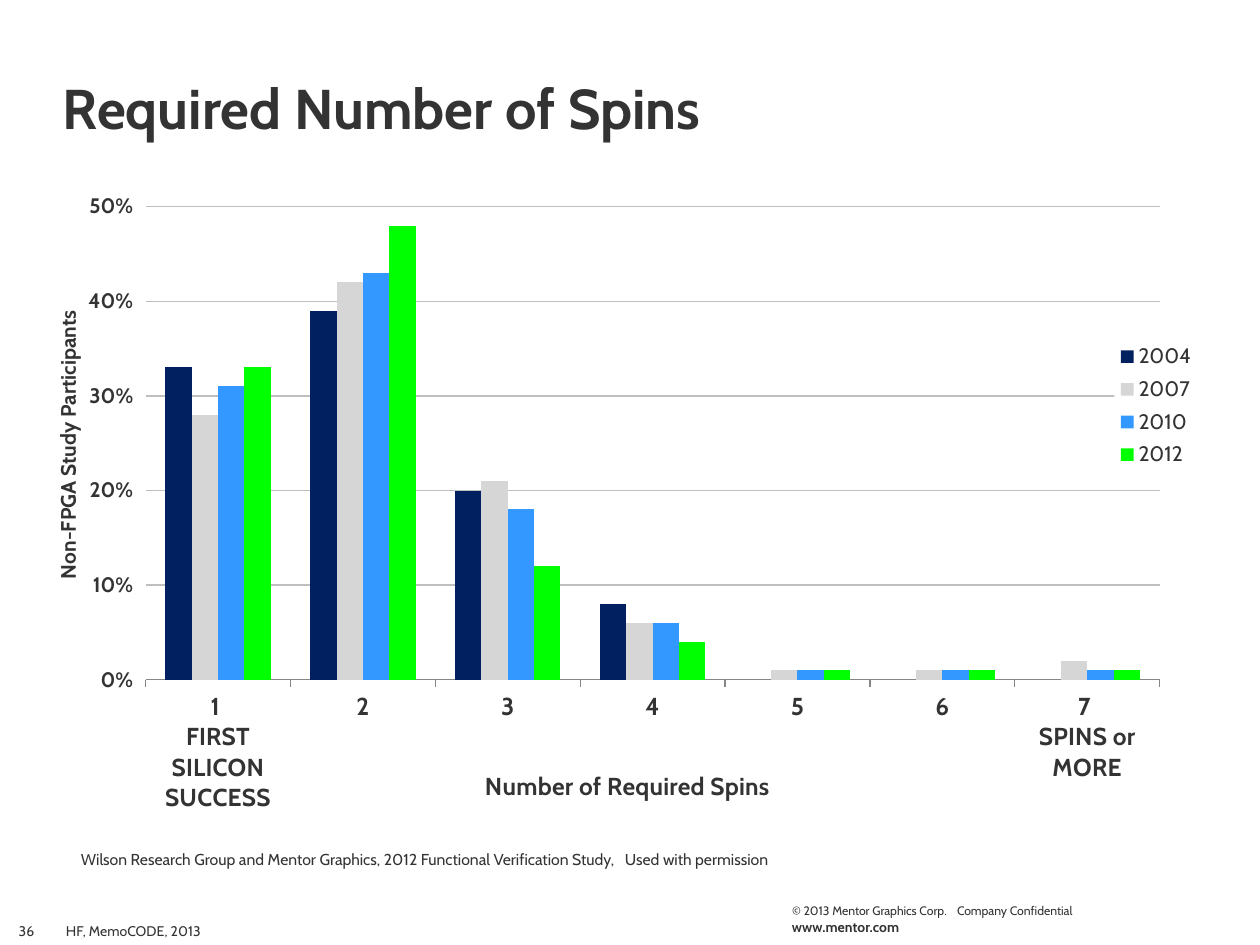
"""Build the slide on the required number of spins."""
import pptx
import pptx.chart.data
import pptx.dml.color
import pptx.enum.chart
import pptx.enum.text
import pptx.oxml
import pptx.oxml.ns
import pptx.util

INK, FACE, GRID, AXIS = "333333", "Cabin", "BFBFBF", "868686"
ENUM = pptx.enum.chart
ALIGN = pptx.enum.text.PP_ALIGN
ANCHOR = pptx.enum.text.MSO_ANCHOR
TOP, LOW = ANCHOR.TOP, ANCHOR.BOTTOM

# text, box, size, bold, side inset, anchor, alignment, tab stop
TEXTS = [
    ("www.mentor.com", (779, 912, 199, 29), 8, True, 13, TOP, ALIGN.LEFT, None),
    ("© 2013 Mentor Graphics Corp.\tCompany Confidential",
     (779, 897, 334, 28), 7, False, 13, TOP, ALIGN.LEFT, 165),
    ("Required Number of Spins", (0, 0, 1260, 147), 32, True, 63, LOW, ALIGN.LEFT, None),
    ("HF, MemoCODE, 2013", (53, 914, 718, 31), 8, False, 13, LOW, ALIGN.LEFT, None),
    ("Wilson Research Group and Mentor Graphics, 2012 Functional Verification Study,"
     "\tUsed with permission", (68, 844, 716, 32), 9, False, 13, TOP, ALIGN.LEFT, 544),
    ("36", (0, 914, 53, 31), 8, False, 13, LOW, ALIGN.CENTER, None),
]
CHART = (32, 185, 1196, 659)
CATS = ["1 \nFIRST SILICON SUCCESS", "2", "3", "4", "5", "6", "7 \nSPINS or MORE"]
SERIES = [
    ("2004", "002060", (0.33, 0.39, 0.2, 0.08, None, None, None)),
    ("2007", "D6D6D6", (0.28, 0.42, 0.21, 0.06, 0.01, 0.01, 0.02)),
    ("2010", "3398FF", (0.31, 0.43, 0.18, 0.06, 0.01, 0.01, 0.01)),
    ("2012", "00FF00", (0.33, 0.48, 0.12, 0.04, 0.01, 0.01, 0.01)),
]
PLOT = (0.095, 0.033, 0.848, 0.718)
KEY = (0.905, 0.23, 0.07, 0.21)


def px(num):
    return round(num * 914400 / 126)


def paint(color, tone):
    color.rgb = pptx.dml.color.RGBColor.from_string(tone)


def style(font, size, bold):
    font.name, font.size, font.bold = FACE, pptx.util.Pt(size), bold
    paint(font.color, INK)


def xml(body):
    head, tail = body.split(">", 1)
    return pptx.oxml.parse_xml(f"{head} {pptx.oxml.ns.nsdecls('c', 'a')}>{tail}")


def place(node, spot, inner=False):
    for old in node.xpath("c:layout"):
        node.remove(old)
    body = '<c:layoutTarget val="inner"/>' if inner else ""
    body += '<c:xMode val="edge"/><c:yMode val="edge"/>'
    body += "".join(f'<c:{key} val="{val}"/>' for key, val in zip("xywh", spot))
    part = xml(f"<c:layout><c:manualLayout>{body}</c:manualLayout></c:layout>")
    over = node.xpath("c:overlay")
    if over:
        over[0].addprevious(part)
    else:
        node.insert(0, part)


def write(slide, text, box, size, bold, inset, anchor, align, stop):
    frame = slide.shapes.add_textbox(*map(px, box)).text_frame
    frame.word_wrap, frame.vertical_anchor = True, anchor
    frame.margin_left = frame.margin_right = px(inset)
    frame.text = text
    para = frame.paragraphs[0]
    para.alignment = align
    if stop:
        tabs = xml(f'<a:tabLst><a:tab pos="{px(stop)}" algn="l"/></a:tabLst>')
        para._p.get_or_add_pPr().append(tabs)
    for run in para.runs:
        style(run.font, size, bold)


def label(axis, text, size, spot, turn):
    title = axis.axis_title
    title.text_frame.text = text
    style(title.text_frame.paragraphs[0].runs[0].font, size, True)
    title.text_frame._txBody.bodyPr.set("rot", str(turn))
    place(title._element, spot)
    style(axis.tick_labels.font, size, True)


def draw(slide):
    data = pptx.chart.data.CategoryChartData(number_format="0%")
    data.categories = CATS
    for name, tone, vals in SERIES:
        data.add_series(name, vals)
    kind = ENUM.XL_CHART_TYPE.COLUMN_CLUSTERED
    chart = slide.shapes.add_chart(kind, *map(px, CHART), data).chart
    style(chart.font, 10, False)
    chart.has_title = False
    plot = chart.plots[0]
    plot.gap_width, plot.overlap, plot.vary_by_categories = 150, 0, False
    for item, (name, tone, vals) in zip(plot.series, SERIES):
        item.format.fill.solid()
        paint(item.format.fill.fore_color, tone)
    cat, val = chart.category_axis, chart.value_axis
    label(cat, "Number of Required Spins", 14, (0.375, 0.88), 0)
    label(val, "Non-FPGA Study Participants", 12, (0.015, 0.185), -5400000)
    cat.major_tick_mark = ENUM.XL_TICK_MARK.OUTSIDE
    val.major_tick_mark = ENUM.XL_TICK_MARK.OUTSIDE
    val.minimum_scale, val.maximum_scale, val.major_unit = 0, 0.5, 0.1
    val.tick_labels.number_format = "0%"
    val.tick_labels.number_format_is_linked = False
    val.format.line.fill.background()
    for line, tone in ((cat.format.line, AXIS), (val.major_gridlines.format.line, GRID)):
        paint(line.color, tone)
        line.width = pptx.util.Pt(0.75)
    chart.has_legend = True
    key = chart.legend
    key.position = ENUM.XL_LEGEND_POSITION.RIGHT
    key.include_in_layout = False
    style(key.font, 12, False)
    place(key._element, KEY)
    fill = '<c:spPr><a:solidFill><a:srgbClr val="FFFFFF"/></a:solidFill></c:spPr>'
    key._element.xpath("c:overlay")[0].addnext(xml(fill))
    place(chart._chartSpace.xpath("c:chart/c:plotArea")[0], PLOT, True)


def main():
    deck = pptx.Presentation()
    deck.slide_width, deck.slide_height = px(1260), px(945)
    slide = deck.slides.add_slide(deck.slide_layouts[6])
    draw(slide)
    for item in TEXTS:
        write(slide, *item)
    deck.save("out.pptx")


if __name__ == "__main__":
    main()
